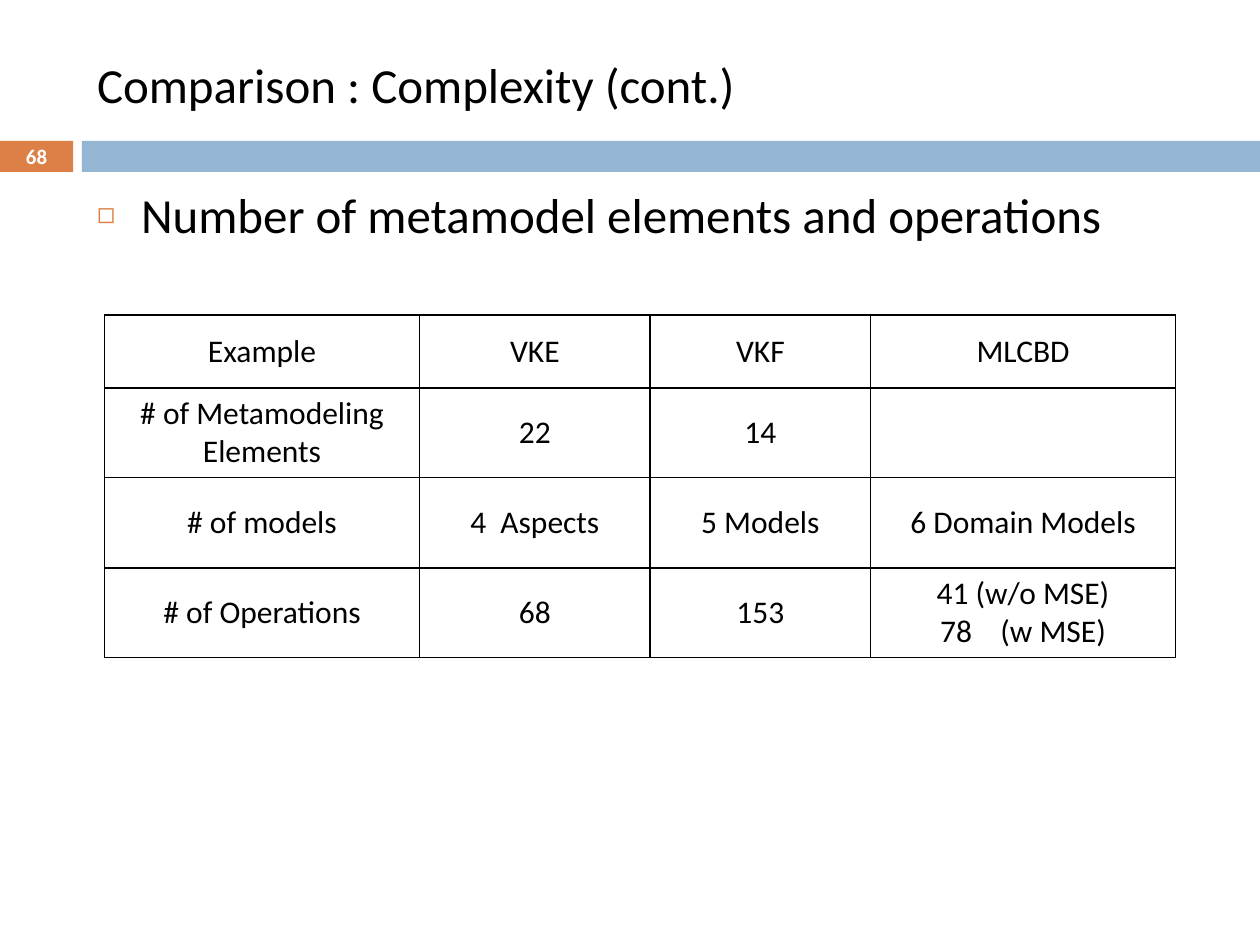
from typing import NamedTuple

from lxml.etree import SubElement
from pptx import Presentation
from pptx.dml.color import RGBColor
from pptx.enum.shapes import MSO_SHAPE as Preset
from pptx.enum.text import MSO_ANCHOR as Anchor, MSO_AUTO_SIZE as AutoSize, PP_ALIGN as Align
from pptx.oxml.ns import qn
from pptx.util import Inches, Pt

WIDTH, HEIGHT = 10, 7.5
FONT = "Calibri"
COLORS = {"text": "000000", "accent": "DD8047", "band": "94B6D2", "white": "FFFFFF"}


class Box(NamedTuple):
    """A rectangle given as shares of the slide's width and height."""
    left: float
    top: float
    width: float
    height: float

    def lengths(self) -> tuple:
        return tuple(Inches(share * side) for share, side in zip(self, (WIDTH, HEIGHT) * 2))


class Bar(NamedTuple):
    box: Box
    color: str


BAR_TOP, BAR_HEIGHT, NUMBER_WIDTH, BAND_LEFT = 0.149, 0.033, 0.058, 0.065
CONTENT_LEFT, CONTENT_WIDTH = 0.067, 0.892
BARS = [
    Bar(Box(0, BAR_TOP, NUMBER_WIDTH, BAR_HEIGHT), "accent"),
    Bar(Box(BAND_LEFT, BAR_TOP, 1 - BAND_LEFT, BAR_HEIGHT), "band"),
]
TITLE_BOX = Box(CONTENT_LEFT, 0.033, CONTENT_WIDTH, 0.111)
BODY_BOX = Box(CONTENT_LEFT, 0.189, CONTENT_WIDTH, 0.756)
NUMBER_BOX = Box(0, 0.147, NUMBER_WIDTH, 0.036)

# Table grid in inches
TABLE_LEFT, TABLE_TOP = 0.83, 2.5
COLUMNS = [2.5, 1.83, 1.75, 2.42]
ROWS = [0.58, 0.71, 0.72, 0.71]
CELLS = [
    ["Example", "VKE", "VKF", "MLCBD"],
    ["# of Metamodeling Elements", "22", "14", ""],
    ["# of models", "4  Aspects", "5 Models", "6 Domain Models"],
    ["# of Operations", "68", "153", "41 (w/o MSE)\n78    (w MSE)"],
]


def rgb(name: str) -> RGBColor:
    return RGBColor.from_string(COLORS[name])


def write(frame, text: str, *, size: float, color: str = "text", bold: bool = False,
          align=Align.LEFT, anchor=Anchor.MIDDLE) -> None:
    frame.text = text
    frame.word_wrap = True
    frame.vertical_anchor = anchor
    for paragraph in frame.paragraphs:
        paragraph.alignment = align
        paragraph.font.size = Pt(size)
        for run in paragraph.runs:
            run.font.name = FONT
            run.font.size = Pt(size)
            run.font.bold = bold
            run.font.color.rgb = rgb(color)


def place(shape, box: Box) -> None:
    shape.left, shape.top, shape.width, shape.height = box.lengths()
    shape.text_frame.auto_size = AutoSize.NONE


def add_bar(slide, bar: Bar) -> None:
    shape = slide.shapes.add_shape(Preset.RECTANGLE, *bar.box.lengths())
    shape.shadow.inherit = False
    shape.fill.solid()
    shape.fill.fore_color.rgb = rgb(bar.color)
    shape.line.fill.background()


def add_bullet(paragraph, character: str, color: str) -> None:
    paragraph.space_before = Pt(7)
    properties = paragraph._p.get_or_add_pPr()
    properties.set("marL", str(Inches(0.35)))
    properties.set("indent", str(-Inches(0.35)))
    bullet_color = SubElement(properties, qn("a:buClr"))
    SubElement(bullet_color, qn("a:srgbClr"), val=COLORS[color])
    SubElement(properties, qn("a:buSzPct"), val="60000")
    SubElement(properties, qn("a:buChar"), char=character)


def add_borders(cell, color: str, width: float) -> None:
    properties = cell._tc.get_or_add_tcPr()
    for side in ("lnL", "lnR", "lnT", "lnB"):
        line = SubElement(properties, qn(f"a:{side}"), w=str(Pt(width)))
        SubElement(SubElement(line, qn("a:solidFill")), qn("a:srgbClr"), val=COLORS[color])


def add_comparison_table(slide) -> None:
    frame = slide.shapes.add_table(
        len(ROWS), len(COLUMNS), Inches(TABLE_LEFT), Inches(TABLE_TOP),
        Inches(sum(COLUMNS)), Inches(sum(ROWS)))
    table = frame.table
    table.first_row = table.horz_banding = False
    for column, width in zip(table.columns, COLUMNS):
        column.width = Inches(width)
    for row, height, texts in zip(table.rows, ROWS, CELLS):
        row.height = Inches(height)
        for cell, text in zip(row.cells, texts):
            write(cell.text_frame, text, size=18, align=Align.CENTER)
            cell.vertical_anchor = Anchor.MIDDLE
            add_borders(cell, "text", 1)
            cell.fill.background()


def main() -> None:
    presentation = Presentation()
    presentation.slide_width, presentation.slide_height = Inches(WIDTH), Inches(HEIGHT)
    slide = presentation.slides.add_slide(presentation.slide_layouts[1])

    # Title and list
    title, body = slide.shapes.title, slide.placeholders[1]
    place(title, TITLE_BOX)
    write(title.text_frame, "Comparison : Complexity (cont.)", size=28)
    place(body, BODY_BOX)
    write(body.text_frame, "Number of metamodel elements and operations", size=28,
          anchor=Anchor.TOP)
    add_bullet(body.text_frame.paragraphs[0], "◻", "accent")

    # Divider with the slide number
    for bar in BARS:
        add_bar(slide, bar)
    number = slide.shapes.add_textbox(*NUMBER_BOX.lengths())
    write(number.text_frame, "68", size=11.9, color="white", bold=True, align=Align.CENTER)

    add_comparison_table(slide)
    presentation.save("out.pptx")


if __name__ == "__main__":
    main()
